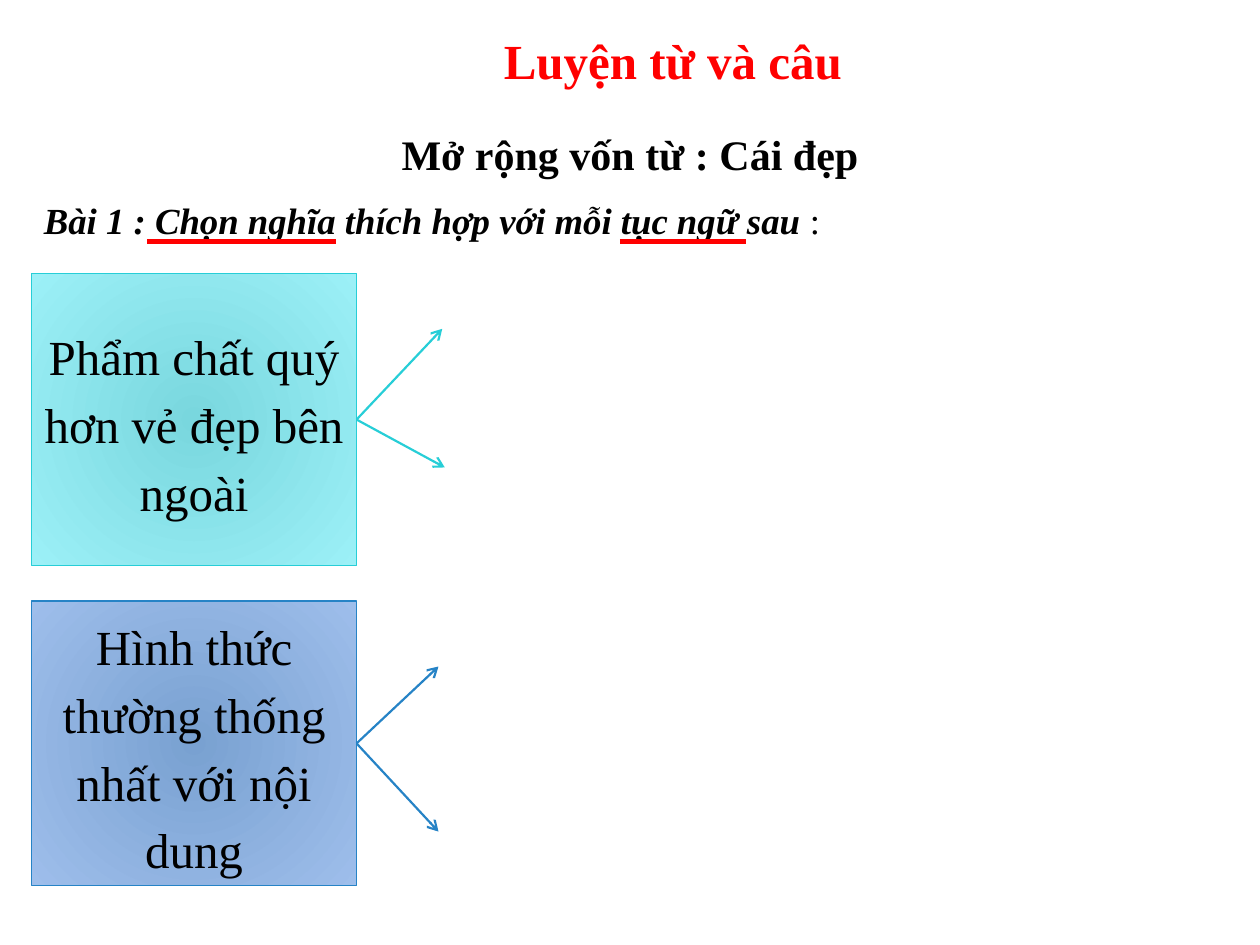
from dataclasses import dataclass

from lxml import etree
from pptx import Presentation
from pptx.dml.color import RGBColor
from pptx.enum.shapes import MSO_CONNECTOR, MSO_SHAPE
from pptx.enum.text import MSO_ANCHOR, MSO_AUTO_SIZE, PP_ALIGN
from pptx.oxml.ns import qn
from pptx.util import Emu, Pt

SCALE = 9144
FONT = "Times New Roman"
BLACK = RGBColor(0x00, 0x00, 0x00)
RED = RGBColor(0xFF, 0x00, 0x00)
TEAL = RGBColor(0x27, 0xCE, 0xD7)
TEAL_IN = RGBColor(0x79, 0xD7, 0xDE)
TEAL_OUT = RGBColor(0x9C, 0xF0, 0xF7)
BLUE = RGBColor(0x26, 0x83, 0xC6)
BLUE_IN = RGBColor(0x79, 0xA1, 0xD1)
BLUE_OUT = RGBColor(0x9E, 0xBE, 0xEB)
RECT = MSO_SHAPE.RECTANGLE
STRAIGHT = MSO_CONNECTOR.STRAIGHT
CENTER = PP_ALIGN.CENTER
LEFT = PP_ALIGN.LEFT
MIDDLE = MSO_ANCHOR.MIDDLE
GROW = MSO_AUTO_SIZE.SHAPE_TO_FIT_TEXT
RIGHT_SIDE = 3


@dataclass
class Label:
    text: str
    area: tuple[int, int, int, int]
    size: int
    color: RGBColor = BLACK
    align: PP_ALIGN = CENTER
    slant: bool = False
    tail: str = ""


@dataclass
class Card:
    text: str
    top: int
    height: int
    edge: RGBColor
    inner: RGBColor
    outer: RGBColor
    tips: list[tuple[int, int]]


LABELS = [
    Label("Luyện từ và câu", (280, 19, 508, 57), 28, RED),
    Label("Mở rộng vốn từ : Cái đẹp", (225, 97, 550, 50), 24),
    Label("Bài 1 : Chọn nghĩa thích hợp với mỗi tục ngữ sau ",
          (25, 152, 692, 45), 21, align=LEFT, slant=True, tail=":"),
]
CARDS = [
    Card("Phẩm chất quý hơn vẻ đẹp bên ngoài", 217, 232,
         TEAL, TEAL_IN, TEAL_OUT, [(351, 261), (353, 371)]),
    Card("Hình thức thường thống nhất với nội dung", 477, 226,
         BLUE, BLUE_IN, BLUE_OUT, [(348, 529), (348, 660)]),
]
MARKS = [(117, 267), (492, 592)]
MARK_Y = 192
CARD_X, CARD_W = 25, 258


def px(*vals: int) -> list[Emu]:
    return [Emu(v * SCALE) for v in vals]


def style(run, size: int, color: RGBColor, bold: bool, slant: bool) -> None:
    font = run.font
    font.name, font.size = FONT, Pt(size)
    font.bold, font.italic = bold, slant
    font.color.rgb = color


def draw_label(slide, label: Label) -> None:
    frame = slide.shapes.add_textbox(*px(*label.area)).text_frame
    frame.word_wrap = True
    frame.auto_size = GROW
    frame.text = label.text
    para = frame.paragraphs[0]
    para.alignment = label.align
    style(para.runs[0], label.size, label.color, True, label.slant)
    if label.tail:
        run = para.add_run()
        run.text = label.tail
        style(run, label.size, label.color, False, False)


def draw_line(slide, start: tuple[int, int], end: tuple[int, int],
              color: RGBColor, width: float):
    line = slide.shapes.add_connector(STRAIGHT, *px(*start, *end))
    line.line.color.rgb = color
    line.line.width = Pt(width)
    etree.SubElement(line._element.spPr, qn("a:effectLst"))
    return line


def fill_radial(shape, inner: RGBColor, outer: RGBColor) -> None:
    shape.fill.gradient()
    for stop, color, place in zip(shape.fill.gradient_stops, (inner, outer), (0, 1)):
        stop.color.rgb = color
        stop.position = place
    grad = shape._element.spPr.find(qn("a:gradFill"))
    grad.remove(grad.find(qn("a:lin")))
    round_path = etree.SubElement(grad, qn("a:path"), path="circle")
    etree.SubElement(round_path, qn("a:fillToRect"),
                     {side: "100000" for side in "ltrb"})


def draw_card(slide, card: Card):
    shape = slide.shapes.add_shape(RECT, *px(CARD_X, card.top, CARD_W, card.height))
    shape.shadow.inherit = False
    fill_radial(shape, card.inner, card.outer)
    shape.line.color.rgb = card.edge
    shape.line.width = Pt(0.75)
    frame = shape.text_frame
    frame.word_wrap = True
    frame.vertical_anchor = MIDDLE
    frame.text = card.text
    para = frame.paragraphs[0]
    para.alignment = CENTER
    para.line_spacing = 1.15
    para.space_after = Pt(10)
    style(para.runs[0], 28, BLACK, False, False)
    return shape


def draw_arrows(slide, card: Card, shape) -> None:
    start = (CARD_X + CARD_W, card.top + card.height // 2)
    for tip in card.tips:
        arrow = draw_line(slide, start, tip, card.edge, 1.25)
        arrow.begin_connect(shape, RIGHT_SIDE)
        stroke = arrow._element.spPr.find(qn("a:ln"))
        etree.SubElement(stroke, qn("a:tailEnd"), type="arrow")


def main() -> None:
    deck = Presentation()
    deck.slide_width, deck.slide_height = px(1000, 750)
    slide = deck.slides.add_slide(deck.slide_layouts[6])
    for label in LABELS:
        draw_label(slide, label)
    shapes = [draw_card(slide, card) for card in CARDS]
    for card, shape in zip(CARDS, shapes):
        draw_arrows(slide, card, shape)
    for left, right in MARKS:
        draw_line(slide, (left, MARK_Y), (right, MARK_Y), RED, 2.75)
    deck.save("out.pptx")


if __name__ == "__main__":
    main()
